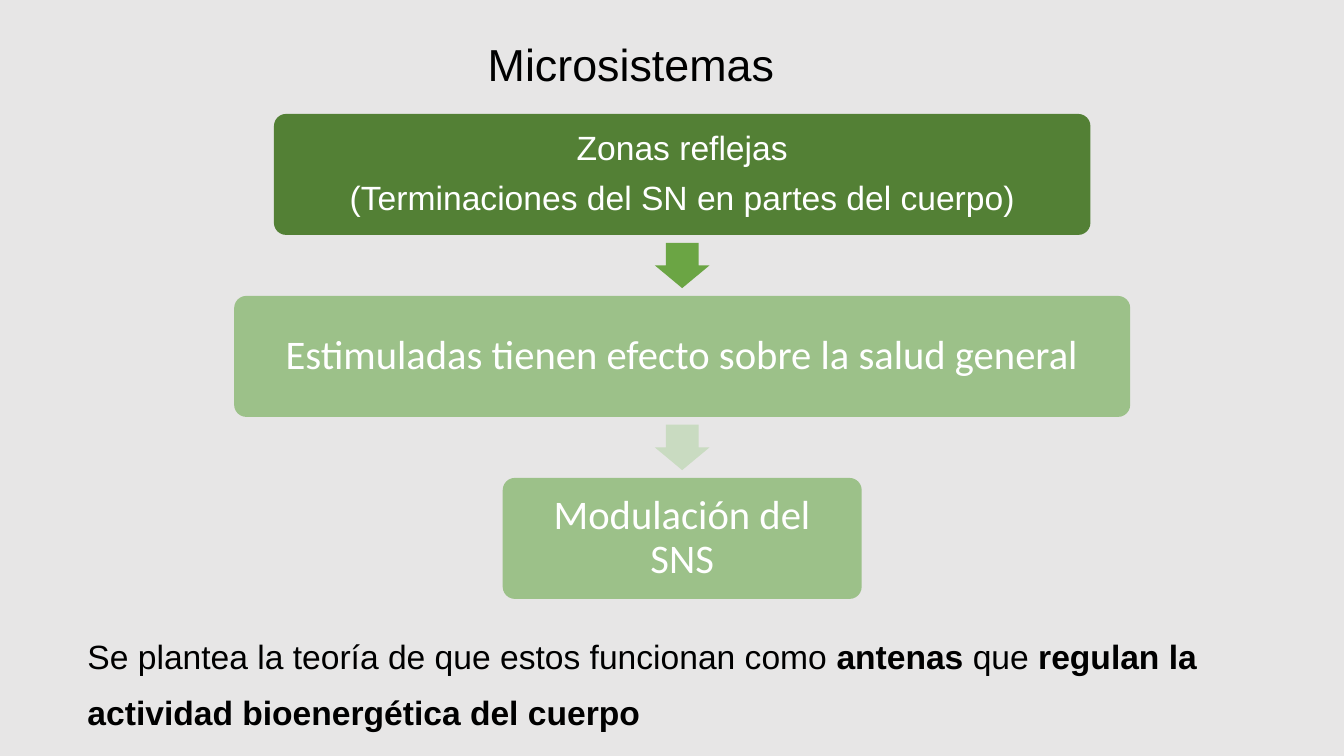
"""Build the Microsistemas slide: a three-step vertical flow with a closing statement."""
from dataclasses import dataclass

from pptx import Presentation
from pptx.dml.color import RGBColor
from pptx.enum.shapes import MSO_SHAPE as Shape
from pptx.enum.text import MSO_ANCHOR as Anchor, PP_ALIGN as Align
from pptx.util import Pt

CENTER, TOP, HEIGHT, PITCH = 487.3, 81.4, 86.4, 130
ARROW_W, ARROW_H = 39, 32.4
BLACK, WHITE = "000000", "FFFFFF"


@dataclass
class Step:
    lines: list[str]
    width: float
    fill: str
    font: str
    size: float
    inset: float
    arrow: str = ""


STEPS = [
    Step(["Zonas reflejas", "(Terminaciones del SN en partes del cuerpo)"],
         583.2, "538035", "Arial", 24, 7.2, "6BA544"),
    Step(["Estimuladas tienen efecto sobre la salud general"],
         640, "9CC189", "Calibri", 29, 8.64, "C9DBC1"),
    Step(["Modulación del SNS"], 256.4, "9CC189", "Calibri", 29, 8.64),
]
STATEMENT = [
    ("Se plantea la teoría de que estos funcionan como ", False),
    ("antenas ", True),
    ("que ", False),
    ("regulan la actividad bioenergética del cuerpo", True),
]


def rgb(color: str) -> RGBColor:
    return RGBColor.from_string(color)


def set_attrs(target, formats: dict) -> None:
    for name, value in formats.items():
        setattr(target, name, value)


def add_run(p, text: str, font: str, size: float, color: str, bold: bool = False) -> None:
    r = p.add_run()
    r.text = text
    set_attrs(r.font, {"name": font, "size": Pt(size), "bold": bold})
    r.font.color.rgb = rgb(color)


def add_solid(s, kind, top: float, width: float, height: float, fill: str, adjust: list[float]):
    sp = s.shapes.add_shape(kind, Pt(CENTER - width / 2), Pt(top), Pt(width), Pt(height))
    sp.shadow.inherit = False
    sp.fill.solid()
    sp.fill.fore_color.rgb = rgb(fill)
    sp.line.fill.background()
    for i, value in enumerate(adjust):
        sp.adjustments[i] = value
    return sp


def add_step(s, step: Step, top: float) -> None:
    sp = add_solid(s, Shape.ROUNDED_RECTANGLE, top, step.width, HEIGHT, step.fill, [0.1])
    tf = sp.text_frame
    set_attrs(tf, {"word_wrap": True, "vertical_anchor": Anchor.MIDDLE})
    sides = ("left", "right", "top", "bottom")
    set_attrs(tf, {f"margin_{side}": Pt(step.inset) for side in sides})
    for i, line in enumerate(step.lines):
        p = tf.add_paragraph() if i else tf.paragraphs[0]
        set_attrs(p, {"alignment": Align.CENTER, "line_spacing": 0.9,
                      "space_before": Pt(9.5 if i else 0)})
        add_run(p, line, step.font, step.size, WHITE)
    if step.arrow:
        arrow_top = top + (HEIGHT + PITCH - ARROW_H) / 2
        add_solid(s, Shape.DOWN_ARROW, arrow_top, ARROW_W, ARROW_H, step.arrow, [0.6, 0.5])


def add_text(s, box: tuple, runs: list, size: float, anchor, formats: dict) -> None:
    tf = s.shapes.add_textbox(*map(Pt, box)).text_frame
    set_attrs(tf, {"word_wrap": True, "vertical_anchor": anchor})
    p = tf.paragraphs[0]
    set_attrs(p, formats)
    for text, bold in runs:
        add_run(p, text, "Arial", size, BLACK, bold)


def main() -> None:
    prs = Presentation()
    set_attrs(prs, {"slide_width": Pt(960), "slide_height": Pt(540)})
    s = prs.slides.add_slide(prs.slide_layouts[6])
    s.background.fill.solid()
    s.background.fill.fore_color.rgb = rgb("E7E6E6")
    add_text(s, (341.3, 26.6, 277.2, 43.2), [("Microsistemas", False)], 32,
             Anchor.MIDDLE, {"line_spacing": 0.9})
    add_text(s, (55.4, 439.2, 848.9, 88.6), STATEMENT, 24,
             Anchor.TOP, {"line_spacing": 1.4, "space_before": Pt(10)})
    for i, step in enumerate(STEPS):
        add_step(s, step, TOP + i * PITCH)
    prs.save("out.pptx")


if __name__ == "__main__":
    main()
